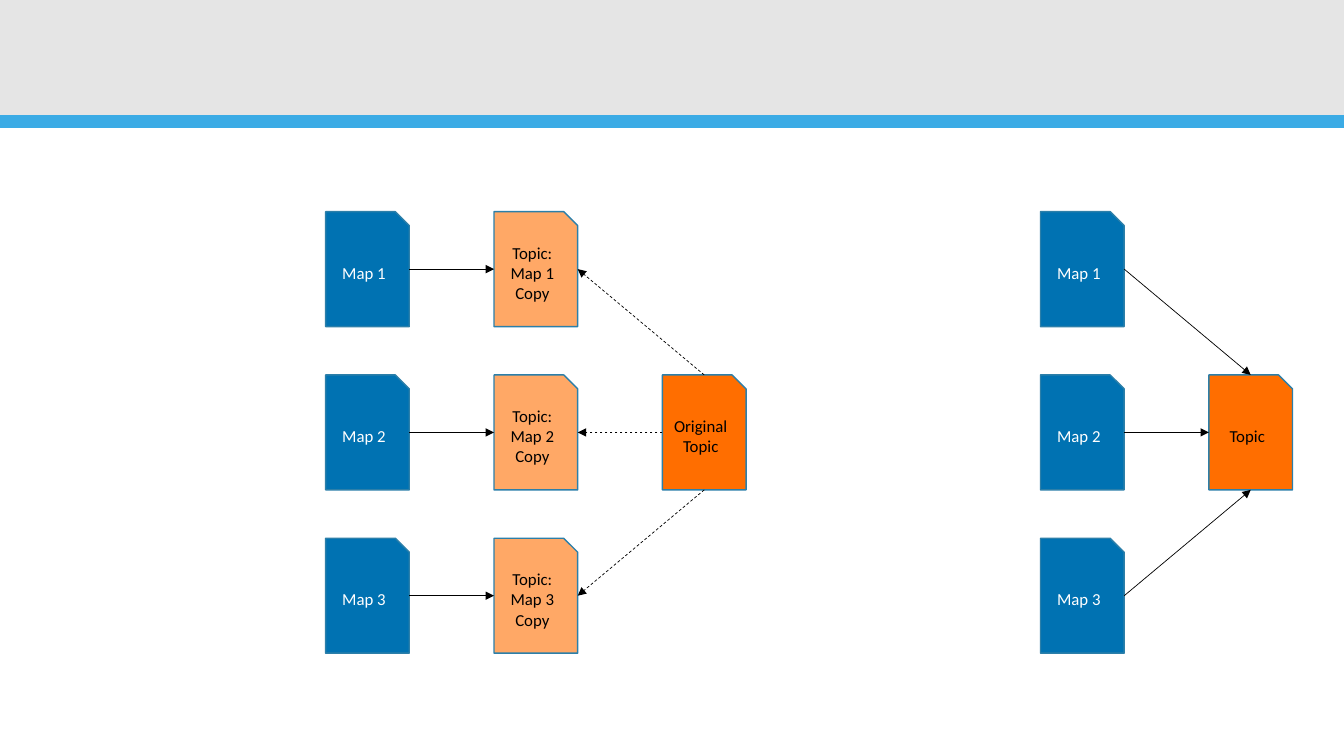
from dataclasses import dataclass

from lxml import etree
from pptx import Presentation
from pptx.dml.color import RGBColor
from pptx.enum.dml import MSO_LINE
from pptx.enum.shapes import MSO_CONNECTOR, MSO_SHAPE
from pptx.enum.text import MSO_ANCHOR, PP_ALIGN
from pptx.oxml.ns import qn
from pptx.util import Inches, Pt

RECTANGLE = MSO_SHAPE.RECTANGLE
SNIPPED = MSO_SHAPE.SNIP_1_RECTANGLE
STRAIGHT = MSO_CONNECTOR.STRAIGHT
DASH = MSO_LINE.DASH
MIDDLE = MSO_ANCHOR.MIDDLE
CENTER = PP_ALIGN.CENTER
TOP, LEFT, BOTTOM, RIGHT = range(4)  # connection sites of a card
BLANK_LAYOUT = 6


@dataclass(frozen=True)
class Theme:
    font: str = "Calibri"
    text_size: float = 12
    outline_width: float = 1
    arrow_width: float = 0.5
    header: str = "E5E5E5"
    accent: str = "3BABE5"
    map_fill: str = "0072B2"
    copy_fill: str = "FFA866"
    topic_fill: str = "FF6E00"
    outline: str = "2C7FA9"
    dark: str = "000000"
    light: str = "FFFFFF"


@dataclass(frozen=True)
class Grid:
    """Places cards in inches, by column and row."""
    left: float
    top: float = 2.1
    column_step: float = 1.67
    row_step: float = 1.62
    card_width: float = 0.83
    card_height: float = 1.14

    def cell(self, column, row):
        return (self.left + column * self.column_step,
                self.top + row * self.row_step,
                self.card_width, self.card_height)


class DiagramPage:
    def __init__(self, deck, theme):
        self.theme = theme
        self.page = deck.slides.add_slide(deck.slide_layouts[BLANK_LAYOUT])

    def shape(self, kind, place, fill, outline):
        box = self.page.shapes.add_shape(kind, *map(Inches, place))
        box.shadow.inherit = False
        box.fill.solid()
        box.fill.fore_color.rgb = RGBColor.from_string(fill)
        box.line.color.rgb = RGBColor.from_string(outline)
        box.line.width = Pt(self.theme.outline_width)
        return box

    def band(self, top, height, color):
        self.shape(RECTANGLE, (0, top, 13.33, height), color, color)

    def card(self, place, text, fill, color):
        box = self.shape(SNIPPED, place, fill, self.theme.outline)
        frame = box.text_frame
        frame.word_wrap = True
        frame.vertical_anchor = MIDDLE
        frame.text = text
        para = frame.paragraphs[0]
        para.alignment = CENTER
        para.font.name = self.theme.font
        para.font.size = Pt(self.theme.text_size)
        para.font.color.rgb = RGBColor.from_string(color)
        return box

    def map_cards(self, grid):
        return [self.card(grid.cell(0, row), f"Map {row + 1}",
                          self.theme.map_fill, self.theme.light)
                for row in range(3)]

    def arrow(self, start, start_site, end, end_site, dashed=False):
        link = self.page.shapes.add_connector(STRAIGHT, 0, 0, 0, 0)
        link.begin_connect(start, start_site)
        link.end_connect(end, end_site)
        link.line.color.rgb = RGBColor.from_string(self.theme.dark)
        link.line.width = Pt(self.theme.arrow_width)
        if dashed:
            link.line.dash_style = DASH
        etree.SubElement(link.line._get_or_add_ln(), qn("a:tailEnd"), type="triangle")
        etree.SubElement(link._element.spPr, qn("a:effectLst"))


def draw_copied_topics(diagram, grid):
    theme = diagram.theme
    source = diagram.card(grid.cell(2, 1), "Original\vTopic", theme.topic_fill, theme.dark)
    maps = diagram.map_cards(grid)
    for row, (map_card, site) in enumerate(zip(maps, (TOP, LEFT, BOTTOM))):
        topic = diagram.card(grid.cell(1, row), f"Topic:\vMap {row + 1} Copy",
                             theme.copy_fill, theme.dark)
        diagram.arrow(map_card, RIGHT, topic, LEFT)
        diagram.arrow(source, site, topic, RIGHT, dashed=True)


def draw_shared_topic(diagram, grid):
    theme = diagram.theme
    topic = diagram.card(grid.cell(1, 1), "Topic", theme.topic_fill, theme.dark)
    for map_card, site in zip(diagram.map_cards(grid), (TOP, LEFT, BOTTOM)):
        diagram.arrow(map_card, RIGHT, topic, site)


def main():
    deck = Presentation()
    deck.slide_width, deck.slide_height = Inches(13.33), Inches(7.5)
    diagram = DiagramPage(deck, Theme())
    diagram.band(0, 1.15, diagram.theme.header)
    diagram.band(1.15, 0.11, diagram.theme.accent)
    draw_copied_topics(diagram, Grid(left=3.23))
    draw_shared_topic(diagram, Grid(left=10.32))
    deck.save("out.pptx")


if __name__ == "__main__":
    main()
